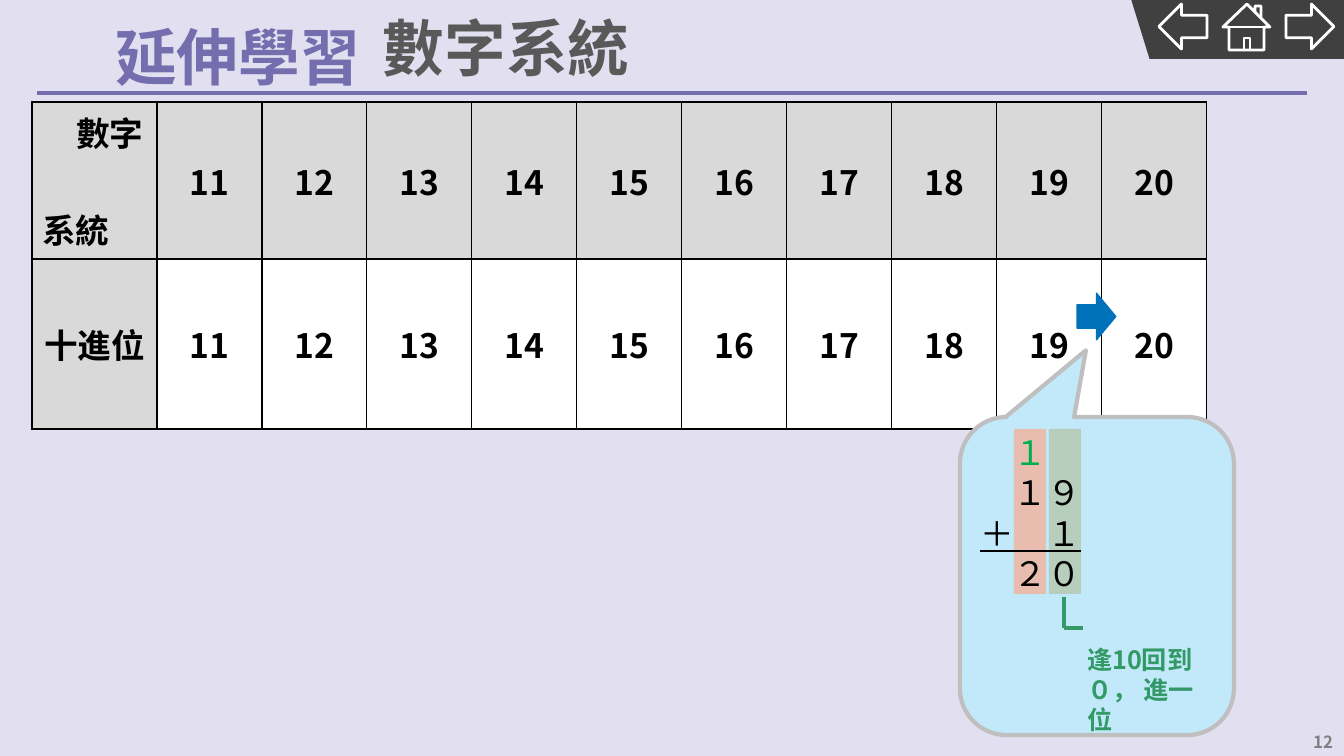
from dataclasses import dataclass

from lxml.etree import SubElement
from pptx import Presentation
from pptx.dml.color import RGBColor
from pptx.enum.shapes import MSO_CONNECTOR, MSO_SHAPE
from pptx.enum.text import MSO_ANCHOR, PP_ALIGN
from pptx.oxml.ns import qn
from pptx.util import Emu, Pt

PX = 12192000 / 1344


def px(length):
    return Emu(round(length * PX))


@dataclass(frozen=True)
class Theme:
    font: str = "Noto Sans CJK SC"
    number_font: str = "Noto Sans CJK TC"
    background: str = "E2E0F0"
    purple: str = "746DAE"
    title: str = "595959"
    navigation: str = "404040"
    muted: str = "7F7F7F"
    black: str = "000000"
    white: str = "FFFFFF"
    header: str = "D9D9D9"
    bubble: str = "C2E9FA"
    bubble_line: str = "BFBFBF"
    note: str = "339966"
    carry: str = "00B050"
    tens: str = "E8BCAE"
    ones: str = "B8CEBD"
    arrow: str = "0072BC"
    heading_size: int = 44
    body_size: int = 24
    note_size: int = 18
    number_size: int = 12


THEME = Theme()


def color(value):
    return RGBColor.from_string(value)


def style_paragraph(paragraph, text, size, fill, bold=False, align=PP_ALIGN.LEFT,
                    indent=0, font_name=THEME.font):
    paragraph.text = text
    paragraph.alignment = align
    if indent:
        paragraph._p.get_or_add_pPr().set("marL", str(px(indent)))
    font = paragraph.font
    font.size, font.bold, font.name = Pt(size), bold, font_name
    font.color.rgb = color(fill)
    SubElement(font._element, qn("a:ea")).set("typeface", font_name)


def add_text_frame(shapes, left, top, width, height, anchor=MSO_ANCHOR.TOP, insets=(10, 5, 10, 5)):
    box = shapes.add_textbox(px(left), px(top), px(width), px(height))
    frame = box.text_frame
    frame.word_wrap = True
    frame.vertical_anchor = anchor
    (frame.margin_left, frame.margin_top,
     frame.margin_right, frame.margin_bottom) = map(px, insets)
    return frame


def paint(shape, fill=None, line=None, weight=1):
    shape.shadow.inherit = False
    if fill:
        shape.fill.solid()
        shape.fill.fore_color.rgb = color(fill)
    else:
        shape.fill.background()
    if line:
        shape.line.color.rgb = color(line)
        shape.line.width = Pt(weight)
    else:
        shape.line.fill.background()


def add_shape(shapes, kind, left, top, width, height, **look):
    shape = shapes.add_shape(kind, px(left), px(top), px(width), px(height))
    paint(shape, **look)
    return shape


def add_line(shapes, start, end, line, weight=2.25):
    connector = shapes.add_connector(MSO_CONNECTOR.STRAIGHT, *map(px, start + end))
    connector.line.color.rgb = color(line)
    connector.line.width = Pt(weight)
    SubElement(connector._element.spPr, qn("a:effectLst"))


def add_navigation(slide, left, top):
    shapes = slide.shapes.add_group_shape().shapes
    panel = add_shape(shapes, MSO_SHAPE.PARALLELOGRAM, left, top, 231, 60, fill=THEME.navigation)
    panel.adjustments[0] = 0.31
    panel._element.spPr.xfrm.set("flipV", "1")
    outline = {"line": THEME.white, "weight": 2}
    # Back and forward arrows
    for offset, rotation in ((28, 180), (155, 0)):
        arrow = add_shape(shapes, MSO_SHAPE.RIGHT_ARROW, left + offset, top + 5, 48, 45, **outline)
        arrow.rotation = rotation
    # Home: walls and roof, eaves, chimney foot, door
    strokes = [
        [(24, 0), (0, 23), (6, 23), (6, 46), (41, 46), (41, 23), (47, 23),
         (38, 14), (38, 2), (32, 2), (32, 8), (24, 0)],
        [(0, 23), (47, 23)],
        [(32, 8), (38, 14)],
        [(21, 46), (21, 34), (27, 34), (27, 46)],
    ]
    strokes = [[(left + 92 + x, top + 5 + y) for x, y in stroke] for stroke in strokes]
    home = shapes.build_freeform(*strokes[0][0], scale=PX)
    for stroke in strokes:
        home.move_to(*stroke[0])
        home.add_line_segments(stroke[1:], close=False)
    paint(home.convert_to_shape(), **outline)


def add_heading(slide, left, top, width):
    section = add_text_frame(slide.shapes, left + 68, top, 281, 85, MSO_ANCHOR.BOTTOM, (10, 5, 10, 0))
    style_paragraph(section.paragraphs[0], "延伸學習", THEME.heading_size, THEME.purple, True)
    title = add_text_frame(slide.shapes, left + 333, top - 3, 762, 93, MSO_ANCHOR.MIDDLE, (13, 7, 13, 7))
    style_paragraph(title.paragraphs[0], "數字系統", THEME.heading_size, THEME.title, True)
    title.paragraphs[0].line_spacing = 0.9
    add_line(slide.shapes, (left, top + 85), (left + width, top + 85), THEME.purple)


def style_cell(cell, fill):
    properties = cell._tc.get_or_add_tcPr()
    for side in ("a:lnL", "a:lnR", "a:lnT", "a:lnB"):
        border = SubElement(properties, qn(side), w=str(Pt(1)))
        SubElement(SubElement(border, qn("a:solidFill")), qn("a:srgbClr"), val=THEME.black)
    cell.fill.solid()
    cell.fill.fore_color.rgb = color(fill)


def add_number_table(slide, left, top):
    numbers = [str(number) for number in range(11, 21)]
    rows = [["數字"] + numbers, ["十進位"] + numbers]
    widths, heights = [125] + [105] * len(numbers), [157, 170]
    table = slide.shapes.add_table(len(rows), len(widths), px(left), px(top),
                                   px(sum(widths)), px(sum(heights))).table
    table.first_row = table.horz_banding = False
    for column, width in zip(table.columns, widths):
        column.width = px(width)
    for row, height in zip(table.rows, heights):
        row.height = px(height)
    for r, values in enumerate(rows):
        for c, value in enumerate(values):
            cell = table.cell(r, c)
            style_cell(cell, THEME.header if r == 0 or c == 0 else THEME.white)
            corner = r == c == 0
            cell.vertical_anchor = MSO_ANCHOR.TOP if corner else MSO_ANCHOR.MIDDLE
            style_paragraph(cell.text_frame.paragraphs[0], value, THEME.body_size, THEME.black, True,
                            PP_ALIGN.LEFT if corner else PP_ALIGN.CENTER, 34 if corner else 0)
    # Lower label of the corner cell
    system = table.cell(0, 0).text_frame.add_paragraph()
    style_paragraph(system, "系統", THEME.body_size, THEME.black, True)
    system.space_before = Pt(35)


def add_carry_callout(slide, left, top, width, height):
    shapes = slide.shapes.add_group_shape().shapes
    bubble = add_shape(shapes, MSO_SHAPE.ROUNDED_RECTANGULAR_CALLOUT, left, top, width, height,
                       fill=THEME.bubble, line=THEME.bubble_line, weight=3)
    for index, value in enumerate((-0.04, -0.71, 0.17)):
        bubble.adjustments[index] = value
    # Bracket from the ones column to the note
    corner = (left + 104, top + 211)
    add_line(shapes, (left + 104, top + 180), corner, THEME.note)
    add_line(shapes, corner, (left + 123, top + 211), THEME.note)
    # Tens and ones bands
    for offset, fill in ((54, THEME.tens), (89, THEME.ones)):
        add_shape(shapes, MSO_SHAPE.RECTANGLE, left + offset, top + 12, 32, 165, fill=fill)
    # Column addition, indented by digit places
    place = 34
    frame = add_text_frame(shapes, left - 24, top + 10, 174, 173)
    sums = [("１", 2, THEME.carry), ("１９", 2, THEME.black),
            ("＋　１", 1, THEME.black), ("２０", 2, THEME.black)]
    for index, (text, places, fill) in enumerate(sums):
        paragraph = frame.add_paragraph() if index else frame.paragraphs[0]
        style_paragraph(paragraph, text, THEME.body_size, fill, indent=places * place)
        paragraph.line_spacing = Pt(28.8)
        paragraph.font.underline = text.startswith("＋")
    # Carry note
    note = add_text_frame(shapes, left + 127, top + 227, 124, 90, insets=(0, 0, 0, 0)).paragraphs[0]
    style_paragraph(note, "逢10回到０， 進一位", THEME.note_size, THEME.note, True)
    note.line_spacing = Pt(21.6)


def add_step_arrow(slide, left, top):
    arrow = add_shape(slide.shapes, MSO_SHAPE.DOWN_ARROW, left, top, 47, 39,
                      fill=THEME.arrow, line=THEME.arrow, weight=0.75)
    arrow.rotation = 270


def add_slide_number(slide, left, top, width, height):
    frame = add_text_frame(slide.shapes, left, top, width, height, MSO_ANCHOR.MIDDLE)
    style_paragraph(frame.paragraphs[0], "12", THEME.number_size, THEME.muted, True,
                    PP_ALIGN.RIGHT, font_name=THEME.number_font)


def main():
    presentation = Presentation()
    presentation.slide_width, presentation.slide_height = px(1344), px(756)
    slide = presentation.slides.add_slide(presentation.slide_layouts[6])
    slide.background.fill.solid()
    slide.background.fill.fore_color.rgb = color(THEME.background)
    add_navigation(slide, 1131, -1)
    add_heading(slide, 37, 8, 1270)
    add_slide_number(slide, 1300, 728, 43, 28)
    add_number_table(slide, 32, 102)
    add_carry_callout(slide, 960, 417, 274, 318)
    add_step_arrow(slide, 1073, 297)
    presentation.save("out.pptx")


if __name__ == "__main__":
    main()
